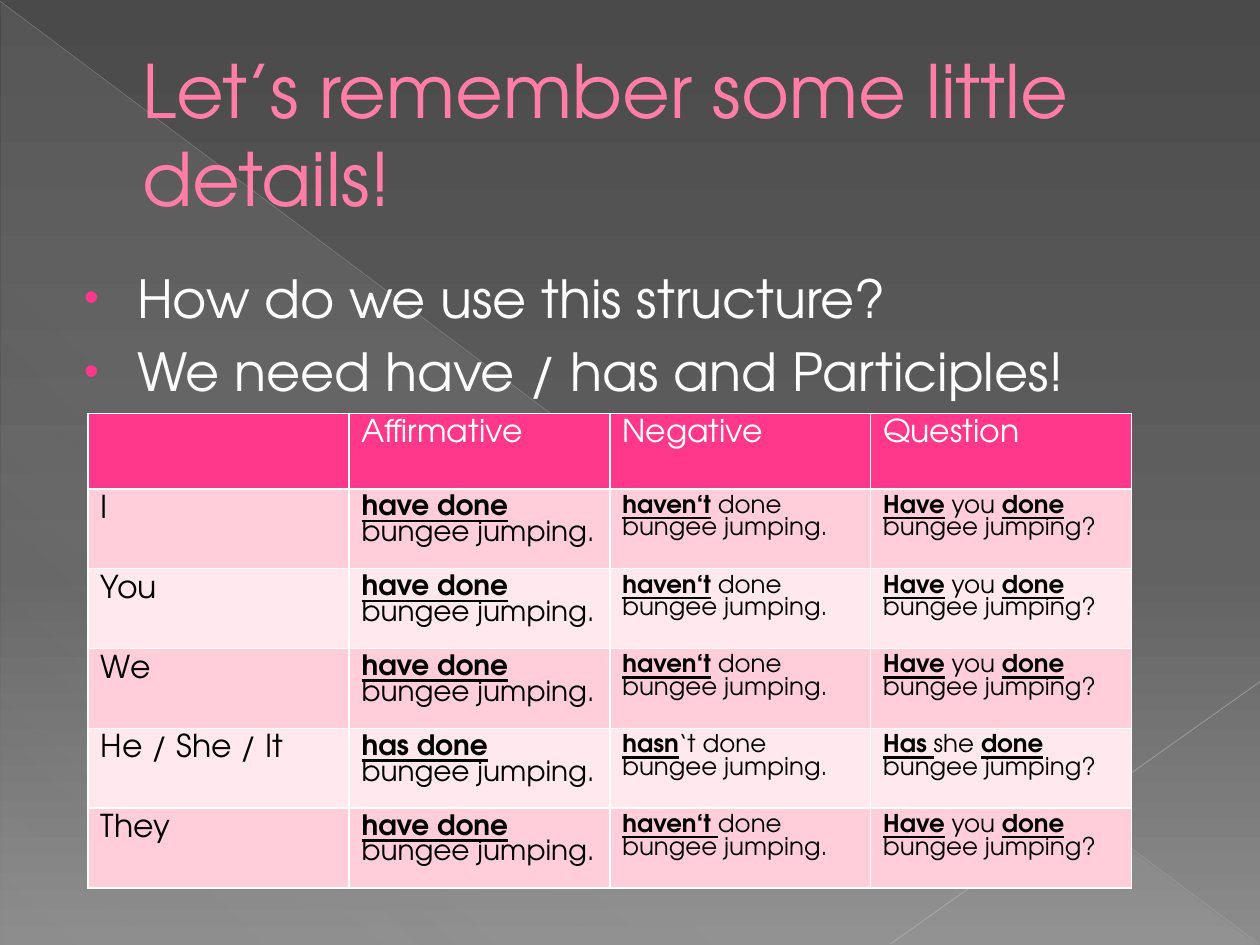
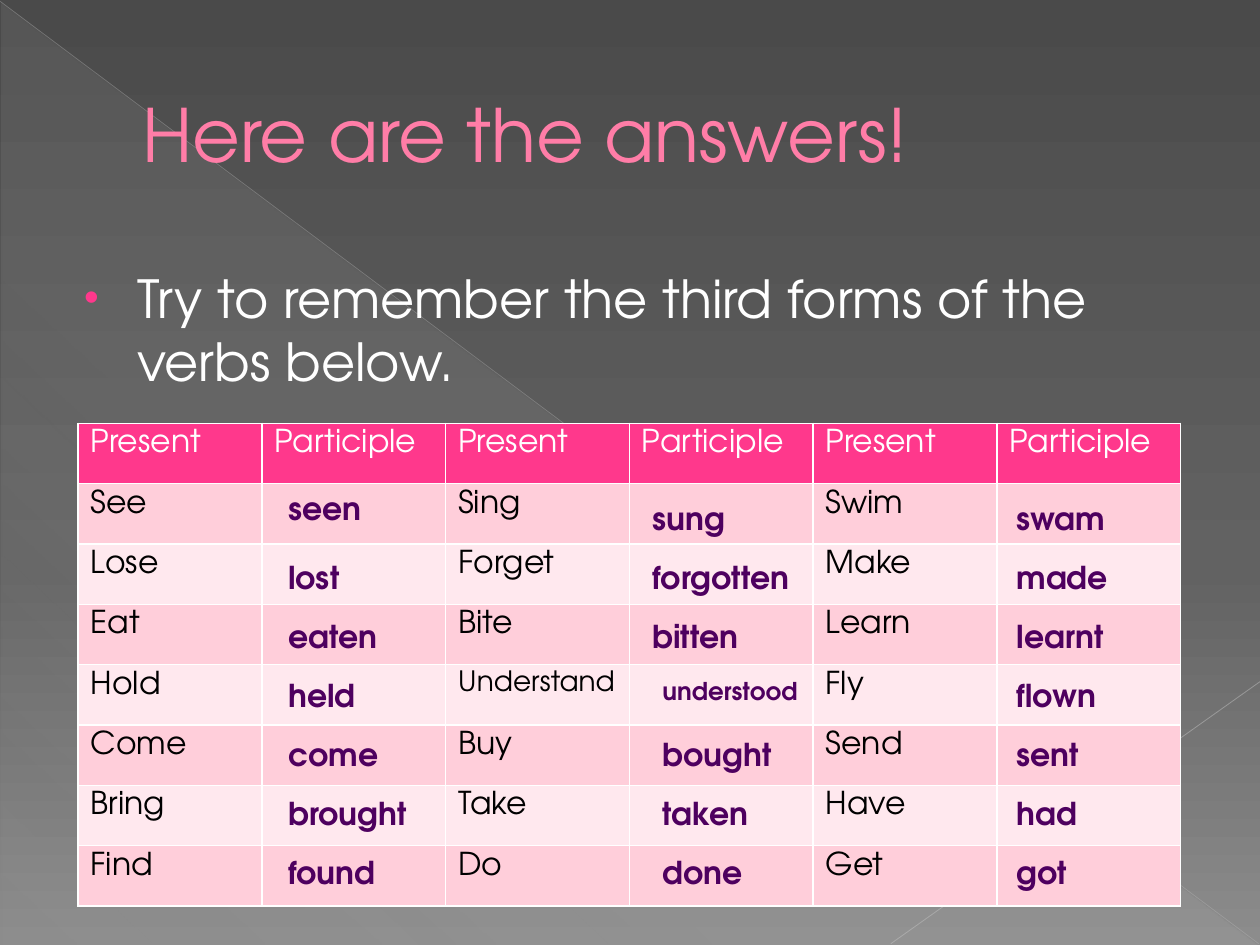
"""Two grammar slides: present perfect forms and a list of participles."""
from dataclasses import dataclass

from pptx import Presentation
from pptx.dml.color import RGBColor
from pptx.enum.shapes import MSO_CONNECTOR, MSO_SHAPE
from pptx.enum.text import MSO_ANCHOR, MSO_AUTO_SIZE
from pptx.oxml import parse_xml
from pptx.oxml.ns import nsdecls, qn
from pptx.util import Inches, Pt


@dataclass(frozen=True)
class Theme:
    font: str = "TeX Gyre Adventor"
    title: str = "FF7DA7"
    edge: str = "B12761"
    accent: str = "FF388C"
    odd: str = "FFCEDA"
    even: str = "FFE8EE"
    white: str = "FFFFFF"
    black: str = "000000"
    answer: str = "4E005F"
    head: int = 42
    body: int = 30
    cell: int = 18
    mid: int = 16
    small: int = 14


@dataclass(frozen=True)
class Stop:
    place: int
    color: str
    alpha: int = 100


@dataclass(frozen=True)
class Ray:
    start: tuple[float, float]
    end: tuple[float, float]
    color: str
    width: float
    alpha: int


THEME = Theme()


@dataclass(frozen=True)
class Cell:
    text: str = ""
    size: int = THEME.cell


@dataclass(frozen=True)
class Answer:
    text: str
    left: float
    top: float
    size: int = THEME.cell


BACK = (Stop(0, "4A4A4A"), Stop(60, "626262"), Stop(100, "8C8C8C"))
GLOW = (Stop(0, "D2D2D2", 10), Stop(70, "D2D2D2", 8), Stop(100, "D2D2D2", 1))
RAYS = (
    Ray((0, 0.01), (9.99, 7.49), "BFBFBF", 0.39, 35),
    Ray((10, 5.41), (7.07, 7.49), "C6C6C6", 0.47, 45),
)
FORMS = (
    ("", "Affirmative", "Negative", "Question"),
    ("I", "*have done *bungee jumping.", "*haven‘t* done bungee jumping.",
     "*Have* you *done* bungee jumping?"),
    ("You", "*have done *bungee jumping.", "*haven‘t* done bungee jumping.",
     "*Have* you *done* bungee jumping?"),
    ("We", "*have done* bungee jumping.", "*haven‘t* done bungee jumping.",
     "*Have* you *done* bungee jumping?"),
    ("He / She / It", "*has done *bungee jumping.", "*hasn*‘t done bungee jumping.",
     "*Has *she *done* bungee jumping?"),
    ("They", "*have done *bungee jumping.", "*haven‘t *done bungee jumping.",
     "*Have* you *done* bungee jumping?"),
)
VERBS = (
    (("See", "seen"), ("Sing", "sung"), ("Swim", "swam")),
    (("Lose", "lost"), ("Forget", "forgotten"), ("Make", "made")),
    (("Eat", "eaten"), ("Bite", "bitten"), ("Learn", "learnt")),
    (("Hold", "held"), ("Understand", "understood"), ("Fly", "flown")),
    (("Come", "come"), ("Buy", "bought"), ("Send", "sent")),
    (("Bring", "brought"), ("Take", "taken"), ("Have", "had")),
    (("Find", "found"), ("Do", "done"), ("Get", "got")),
)


def tint(color: str, alpha: int = 100) -> str:
    """Return the XML of a colour with its opacity in percent."""
    return f'<a:srgbClr {nsdecls("a")} val="{color}"><a:alpha val="{alpha * 1000}"/></a:srgbClr>'


def blend(owner, fill, stops: tuple[Stop, ...], angle: int) -> None:
    """Give a fill a clockwise linear gradient."""
    fill.gradient()
    fill.gradient_angle = 360 - angle
    group = owner.element.find(".//" + qn("a:gsLst"))
    for old in list(group):
        group.remove(old)
    for stop in stops:
        group.append(parse_xml(
            f'<a:gs {nsdecls("a")} pos="{stop.place * 1000}">{tint(stop.color, stop.alpha)}</a:gs>'))


def write(para, text: str, size: int, color: str, bold: bool = False):
    """Add one styled run to a paragraph."""
    run = para.add_run()
    run.text = text
    font = run.font
    font.name, font.size, font.bold = THEME.font, Pt(size), bold
    font.color.rgb = RGBColor.from_string(color)
    return run


def add_box(slide, left: float, top: float, width: float, height: float):
    """Add a wrapping text box and return its frame."""
    frame = slide.shapes.add_textbox(
        Inches(left), Inches(top), Inches(width), Inches(height)).text_frame
    frame.word_wrap = True
    return frame


def add_ray(slide, ray: Ray) -> None:
    """Draw a thin translucent line."""
    line = slide.shapes.add_connector(
        MSO_CONNECTOR.STRAIGHT, *map(Inches, ray.start + ray.end))
    line.line.width = Pt(ray.width)
    line.line.color.rgb = RGBColor.from_string(ray.color)
    shade = line.element.find(".//" + qn("a:solidFill"))
    shade.replace(shade[0], parse_xml(tint(ray.color, ray.alpha)))
    line.element.spPr.append(parse_xml(f'<a:effectLst {nsdecls("a")}/>'))


def add_title(slide, text: str) -> None:
    """Write the outlined slide title."""
    frame = add_box(slide, 0.5, 0.29, 9, 1.53)
    frame.vertical_anchor = MSO_ANCHOR.MIDDLE
    para = frame.paragraphs[0]
    para._p.get_or_add_pPr().set("marL", str(Inches(0.53)))
    run = write(para, text, THEME.head, THEME.title)
    run.font._element.insert(0, parse_xml(
        f'<a:ln {nsdecls("a")} w="{Pt(0.5)}"><a:solidFill>{tint(THEME.edge)}</a:solidFill></a:ln>'))


def add_points(slide, points: tuple[str, ...]) -> None:
    """Write the bulleted lines under the title."""
    frame = add_box(slide, 0.5, 2.06, 9, 5)
    for num, text in enumerate(points):
        para = frame.add_paragraph() if num else frame.paragraphs[0]
        para.space_before = Pt(THEME.body * 0.2)
        props = para._p.get_or_add_pPr()
        props.set("marL", str(Inches(0.49)))
        props.set("indent", str(Inches(-0.42)))
        for part in (f'buClr {nsdecls("a")}>{tint(THEME.accent)}</a:buClr>',
                     f'buSzPct {nsdecls("a")} val="80000"/>',
                     f'buFont {nsdecls("a")} typeface="Arial"/>',
                     f'buChar {nsdecls("a")} char="•"/>'):
            props.append(parse_xml("<a:" + part))
        write(para, text, THEME.body, THEME.white)


def add_slide(deck, title: str, points: tuple[str, ...]):
    """Add a slide with the shared backdrop, title and bullets."""
    slide = deck.slides.add_slide(deck.slide_layouts[6])
    blend(slide, slide.background.fill, BACK, 90)
    wedge = slide.shapes.add_shape(
        MSO_SHAPE.RIGHT_TRIANGLE, Inches(0.01), Inches(0.02), Inches(9.98), Inches(7.48))
    wedge.shadow.inherit = False
    wedge.line.fill.background()
    blend(wedge, wedge.fill, GLOW, 133)
    for ray in RAYS:
        add_ray(slide, ray)
    add_title(slide, title)
    add_points(slide, points)
    return slide


def fill_cell(box, cell: Cell, row: int) -> None:
    """Style a table cell; text between asterisks is bold and underlined."""
    props = box._tc.get_or_add_tcPr()
    for side in "LRTB":
        props.append(parse_xml(
            f'<a:ln{side} {nsdecls("a")} w="{Pt(1)}"><a:solidFill>'
            f'{tint(THEME.white)}</a:solidFill></a:ln{side}>'))
    box.fill.solid()
    shade = THEME.accent if row == 0 else THEME.odd if row % 2 else THEME.even
    box.fill.fore_color.rgb = RGBColor.from_string(shade)
    para = box.text_frame.paragraphs[0]
    color = THEME.black if row else THEME.white
    for num, text in enumerate(cell.text.split("*")):
        if text:
            strong = num % 2 == 1
            write(para, text, cell.size, color, strong).font.underline = strong


def add_grid(slide, left: float, top: float, width: float, height: float,
             rows: list[list[Cell]]) -> None:
    """Draw a table with equal rows and columns."""
    table = slide.shapes.add_table(
        len(rows), len(rows[0]), Inches(left), Inches(top), Inches(width), Inches(height)).table
    for row, cells in enumerate(rows):
        for col, cell in enumerate(cells):
            fill_cell(table.cell(row, col), cell, row)


def add_answer(slide, item: Answer) -> None:
    """Lay a participle over the table."""
    height = 0.4 if item.size == THEME.cell else 0.34
    frame = add_box(slide, item.left, item.top, 1.33, height)
    frame.auto_size = MSO_AUTO_SIZE.SHAPE_TO_FIT_TEXT
    write(frame.paragraphs[0], item.text, item.size, THEME.answer, True)


def show_forms(deck) -> None:
    """Build the slide on the structure."""
    slide = add_slide(deck, "Let’s remember some little details!",
                      ("How do we use this structure?", "We need have / has and Participles!"))
    sizes = (THEME.cell, THEME.mid, THEME.small, THEME.small)
    rows = [[Cell(text, size if num else THEME.cell) for text, size in zip(row, sizes)]
            for num, row in enumerate(FORMS)]
    add_grid(slide, 0.7, 3.28, 8.28, 3.6, rows)


def show_verbs(deck) -> None:
    """Build the slide with the participles."""
    slide = add_slide(deck, "Here are the answers!",
                      ("Try to remember the third forms of the verbs below.",))
    rows = [[Cell("Present"), Cell("Participle")] * 3]
    items = []
    for row, pairs in enumerate(VERBS):
        cells = []
        for col, (verb, form) in enumerate(pairs):
            long = verb == "Understand"
            cells += [Cell(verb, THEME.mid if long else THEME.cell), Cell()]
            left = 2.19 + 2.89 * col + (0.08 if col == 1 and row > 2 else 0)
            top = 3.83 if form == "seen" else 3.91 + 2.81 * row / 6
            items.append(Answer(form, left, top, THEME.small if long else THEME.cell))
        rows.append(cells)
    add_grid(slide, 0.62, 3.36, 8.75, 3.83, rows)
    for item in items:
        add_answer(slide, item)


def main() -> None:
    """Build and save the deck."""
    deck = Presentation()
    deck.slide_width, deck.slide_height = Inches(10), Inches(7.5)
    show_forms(deck)
    show_verbs(deck)
    deck.save("out.pptx")


if __name__ == "__main__":
    main()
